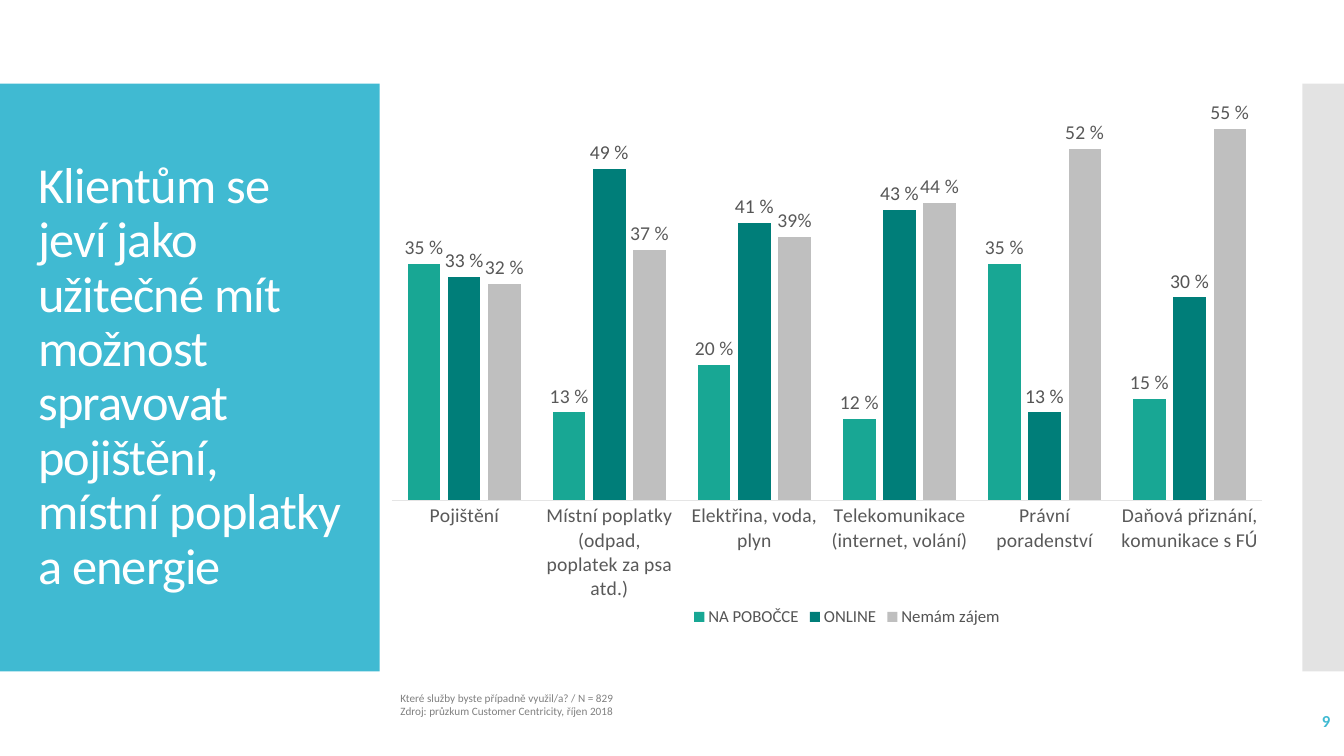
"""Build the slide comparing interest in branch and online services."""
import pptx
import pptx.chart.data
import pptx.dml.color
import pptx.enum.chart
import pptx.enum.shapes
import pptx.enum.text
import pptx.oxml
import pptx.oxml.ns
import pptx.util

Cm = pptx.util.Cm
Pt = pptx.util.Pt
RGBColor = pptx.dml.color.RGBColor
Align = pptx.enum.text.PP_ALIGN

FONT = "Calibri"
CYAN = RGBColor(0x40, 0xBA, 0xD2)
WHITE = RGBColor(0xFF, 0xFF, 0xFF)
SILVER = RGBColor(0xC8, 0xC8, 0xC8)
SOURCE_GRAY = RGBColor(0x80, 0x80, 0x80)
LABEL_GRAY = RGBColor(0x59, 0x59, 0x59)
LEGEND_GRAY = RGBColor(0x54, 0x54, 0x54)
AXIS_GRAY = RGBColor(0xE5, 0xE5, 0xE5)
GREEN = RGBColor(0x18, 0xA7, 0x94)
TEAL = RGBColor(0x00, 0x7E, 0x79)
BAR_GRAY = RGBColor(0xBF, 0xBF, 0xBF)

TITLE = ("Klientům se jeví jako užitečné mít možnost spravovat pojištění, "
         "místní poplatky a energie")
SOURCE = ["Které služby byste případně využil/a? / N = 829",
          "Zdroj: průzkum Customer Centricity, říjen 2018"]
SERVICES = ["Pojištění", "Místní poplatky (odpad, poplatek za psa atd.)",
            "Elektřina, voda, plyn", "Telekomunikace (internet, volání)",
            "Právní poradenství", "Daňová přiznání, komunikace s FÚ"]
CHANNELS = [
    ("NA POBOČCE", GREEN, LABEL_GRAY, (0.35, 0.13, 0.2, 0.12, 0.35, 0.15)),
    ("ONLINE", TEAL, LEGEND_GRAY, (0.33, 0.49, 0.41, 0.43, 0.13, 0.3)),
    ("Nemám zájem", BAR_GRAY, LABEL_GRAY, (0.32, 0.37, 0.39, 0.44, 0.52, 0.55)),
]
PLOT_LAYOUT = (
    "<c:layout %s><c:manualLayout><c:layoutTarget val='inner'/>"
    "<c:xMode val='edge'/><c:yMode val='edge'/><c:x val='0'/><c:y val='0'/>"
    "<c:w val='0.956'/><c:h val='0.756'/></c:manualLayout></c:layout>"
    % pptx.oxml.ns.nsdecls("c"))


class SlideBuilder:
    """Hold the font and the current page, and add its elements."""

    def __init__(self, page, font):
        """Remember the page and the font name."""
        self.page = page
        self.font = font

    def style(self, font, size, color, bold=False):
        """Format one font object."""
        font.name = self.font
        font.size = Pt(size)
        font.bold = bold
        font.color.rgb = color

    def panel(self, left, width, color, opacity=100):
        """Add a full-height coloured band."""
        band = self.page.shapes.add_shape(
            pptx.enum.shapes.MSO_SHAPE.RECTANGLE,
            Cm(left), Cm(2.11), Cm(width), Cm(14.81))
        band.shadow.inherit = False
        band.fill.solid()
        band.fill.fore_color.rgb = color
        band.line.fill.background()
        if opacity < 100:
            for tint in band.element.spPr.iter(pptx.oxml.ns.qn("a:srgbClr")):
                tint.append(pptx.oxml.parse_xml(
                    "<a:alpha %s val='%d'/>"
                    % (pptx.oxml.ns.nsdecls("a"), opacity * 1000)))

    def fill_text(self, box, lines, size, color, align=Align.LEFT, bold=False):
        """Fill a box with one paragraph for each line."""
        frame = box.text_frame
        frame.word_wrap = True
        frame.auto_size = pptx.enum.text.MSO_AUTO_SIZE.NONE
        frame.vertical_anchor = pptx.enum.text.MSO_ANCHOR.MIDDLE
        for index, line in enumerate(lines):
            para = frame.add_paragraph() if index else frame.paragraphs[0]
            para.alignment = align
            span = para.add_run()
            span.text = line
            self.style(span.font, size, color, bold)

    def title(self, text, left, top, width, height):
        """Place the title placeholder in front of the bands."""
        box = self.page.shapes.title
        box.left, box.top, box.width, box.height = map(
            Cm, (left, top, width, height))
        self.page.shapes.element.append(box.element)
        self.fill_text(box, [text], 36, WHITE)
        box.text_frame.paragraphs[0].line_spacing = 0.9
        for properties in box.element.iter(pptx.oxml.ns.qn("a:rPr")):
            properties.set("spc", "-60")

    def text(self, lines, left, top, width, height, size, color, **options):
        """Add a text box."""
        box = self.page.shapes.add_textbox(
            Cm(left), Cm(top), Cm(width), Cm(height))
        self.fill_text(box, lines, size, color, **options)

    def column_chart(self, left, top, width, height):
        """Add the clustered columns with their labels and legend."""
        data = pptx.chart.data.CategoryChartData(number_format="0%")
        data.categories = SERVICES
        for name, _, _, values in CHANNELS:
            data.add_series(name, values)
        chart = self.page.shapes.add_chart(
            pptx.enum.chart.XL_CHART_TYPE.COLUMN_CLUSTERED,
            Cm(left), Cm(top), Cm(width), Cm(height), data).chart
        self.style(chart.font, 10, LABEL_GRAY)
        chart.has_title = False
        chart.has_legend = True
        chart.legend.position = pptx.enum.chart.XL_LEGEND_POSITION.BOTTOM
        chart.legend.include_in_layout = False
        self.style(chart.legend.font, 12, LEGEND_GRAY)
        services = chart.category_axis
        services.major_tick_mark = pptx.enum.chart.XL_TICK_MARK.NONE
        services.format.line.color.rgb = AXIS_GRAY
        services.format.line.width = Pt(0.75)
        self.style(services.tick_labels.font, 14, LABEL_GRAY)
        shares = chart.value_axis
        shares.minimum_scale, shares.maximum_scale = 0, 0.6
        shares.has_major_gridlines = False
        shares.visible = False
        plot = chart.plots[0]
        plot.gap_width, plot.overlap = 100, -24
        plot.vary_by_categories = False
        area = chart.element.chart.plotArea
        for layout in area.findall(pptx.oxml.ns.qn("c:layout")):
            area.remove(layout)
        area.insert(0, pptx.oxml.parse_xml(PLOT_LAYOUT))
        outside = pptx.enum.chart.XL_LABEL_POSITION.OUTSIDE_END
        for series, (_, fill, ink, _) in zip(plot.series, CHANNELS):
            series.format.fill.solid()
            series.format.fill.fore_color.rgb = fill
            labels = series.data_labels
            labels.show_value = True
            labels.position = outside
            labels.number_format = "0 %"
            labels.number_format_is_linked = False
            self.style(labels.font, 14, ink)
        energy = plot.series[2].points[2].data_label
        span = energy.text_frame.paragraphs[0].add_run()
        span.text = "39%"
        self.style(span.font, 14, LABEL_GRAY)
        energy.position = outside


def main():
    """Create and save the deck."""
    deck = pptx.Presentation()
    deck.slide_width, deck.slide_height = Cm(33.87), Cm(19.05)
    builder = SlideBuilder(deck.slides.add_slide(deck.slide_layouts[5]), FONT)
    builder.panel(0, 9.57, CYAN)
    builder.panel(32.82, 1.05, SILVER, opacity=50)
    builder.title(TITLE, 0.71, 3.12, 8.18, 12.78)
    builder.text(SOURCE, 9.84, 17.25, 16.4, 1.02, 8, SOURCE_GRAY)
    builder.text(["9"], 29.54, 17.65, 4.24, 1.02, 12, CYAN,
                 align=Align.RIGHT, bold=True)
    builder.column_chart(9.86, 2.39, 22.96, 13.51)
    deck.save("out.pptx")


if __name__ == "__main__":
    main()
